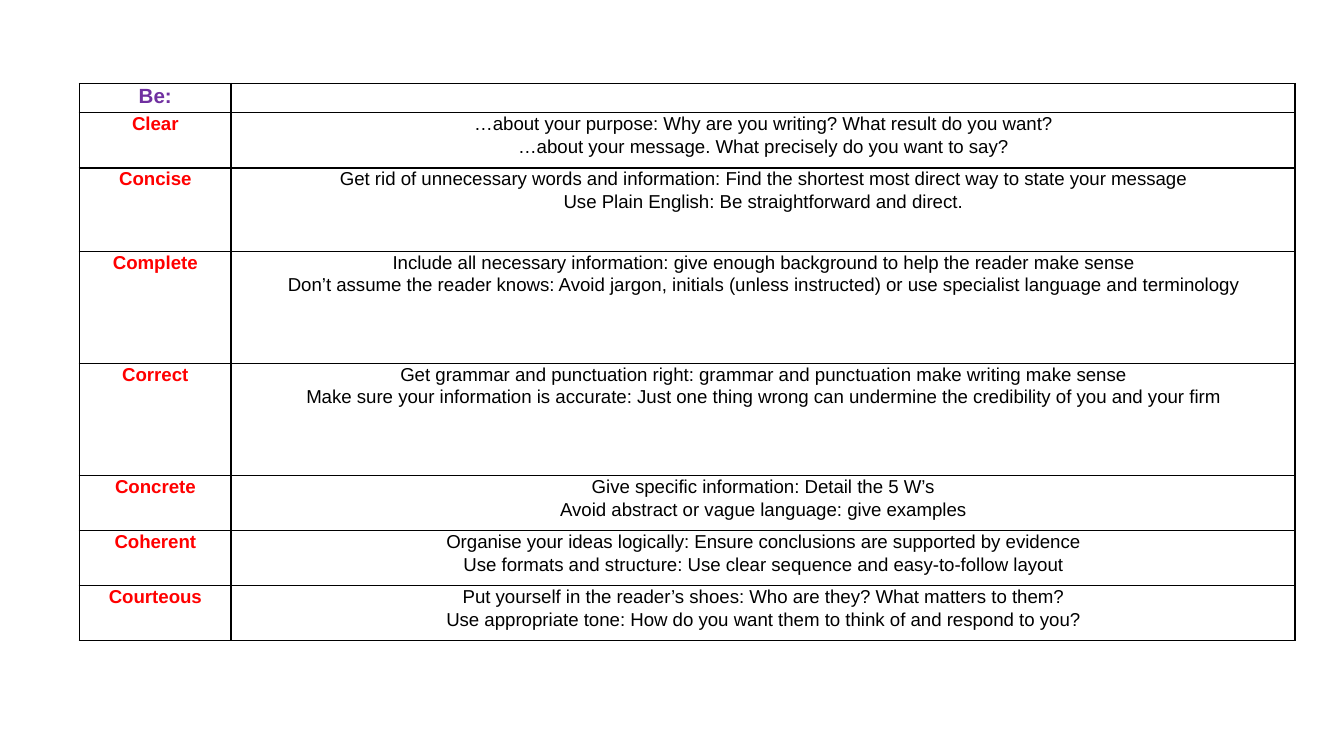
from lxml import etree
from pptx import Presentation
from pptx.dml.color import RGBColor
from pptx.enum.text import MSO_ANCHOR, PP_ALIGN as Align
from pptx.oxml import parse_xml
from pptx.oxml.ns import nsdecls, qn
from pptx.util import Cm, Pt

COLORS = {"heading": "7030A0", "quality": "FF0000", "body": "000000", "border": "000000"}

QUALITIES = [
    ("Clear", 1.04, [
        "…about your purpose: Why are you writing? What result do you want?",
        "…about your message. What precisely do you want to say?"]),
    ("Concise", 1.58, [
        "Get rid of unnecessary words and information: Find the shortest most direct way to state your message",
        "Use Plain English: Be straightforward and direct."]),
    ("Complete", 2.12, [
        "Include all necessary information: give enough background to help the reader make sense",
        "Don’t assume the reader knows: Avoid jargon, initials (unless instructed) "
        "or use specialist language and terminology"]),
    ("Correct", 2.12, [
        "Get grammar and punctuation right: grammar and punctuation make writing make sense",
        "Make sure your information is accurate: Just one thing wrong can undermine "
        "the credibility of you and your firm"]),
    ("Concrete", 1.04, [
        "Give specific information: Detail the 5 W’s",
        "Avoid abstract or vague language: give examples"]),
    ("Coherent", 1.04, [
        "Organise your ideas logically: Ensure conclusions are supported by evidence",
        "Use formats and structure: Use clear sequence and easy-to-follow layout"]),
    ("Courteous", 1.04, [
        "Put yourself in the reader’s shoes: Who are they? What matters to them?",
        "Use appropriate tone: How do you want them to think of and respond to you?"]),
]


class SlideBuilder:
    """Hold the table style and the current slide."""

    font, spacing, margin, border = "Arial", 1.07, Cm(0.18), Pt(1)

    def __init__(self, prs):
        self.s = prs.slides.add_slide(prs.slide_layouts[6])

    def table(self, left, top, widths, heights):
        frame = self.s.shapes.add_table(len(heights), len(widths), Cm(left), Cm(top),
                                        Cm(sum(widths)), Cm(sum(heights)))
        tbl = frame.table
        tbl.first_row = tbl.horz_banding = False
        for col, width in zip(tbl.columns, widths):
            col.width = Cm(width)
        for row, height in zip(tbl.rows, heights):
            row.height = Cm(height)
        return tbl

    def borders(self, cell):
        tc_pr = cell._tc.get_or_add_tcPr()
        for i, side in enumerate("LRTB"):
            tc_pr.insert(i, parse_xml(
                f'<a:ln{side} {nsdecls("a")} w="{self.border}"><a:solidFill>'
                f'<a:srgbClr val="{COLORS["border"]}"/></a:solidFill></a:ln{side}>'))

    def cell(self, cell, lines, color="body", size=10, bold=False):
        cell.fill.background()
        self.borders(cell)
        cell.margin_left = cell.margin_right = self.margin
        cell.margin_top = cell.margin_bottom = 0
        cell.vertical_anchor = MSO_ANCHOR.TOP
        tf = cell.text_frame
        for i, line in enumerate(lines):
            p = tf.add_paragraph() if i else tf.paragraphs[0]
            p.alignment, p.line_spacing = Align.CENTER, self.spacing
            r = p.add_run()
            r.text = line
            r.font.name, r.font.size, r.font.bold = self.font, Pt(size), bold
            r.font.color.rgb = RGBColor.from_string(COLORS[color])
        if not lines:
            etree.SubElement(tf.paragraphs[0]._p, qn("a:endParaRPr"), sz=str(size * 100))


def main():
    prs = Presentation()
    prs.slide_width, prs.slide_height = Cm(25.4), Cm(14.29)
    slide = SlideBuilder(prs)
    heights = [0.55] + [height for _, height, _ in QUALITIES]
    tbl = slide.table(1.5, 1.58, [2.87, 20.1], heights)
    slide.cell(tbl.cell(0, 0), ["Be:"], color="heading", size=11, bold=True)
    slide.cell(tbl.cell(0, 1), [])
    for row, (quality, _, advice) in enumerate(QUALITIES, 1):
        slide.cell(tbl.cell(row, 0), [quality], color="quality", bold=True)
        slide.cell(tbl.cell(row, 1), advice)
    prs.save("out.pptx")


if __name__ == "__main__":
    main()
